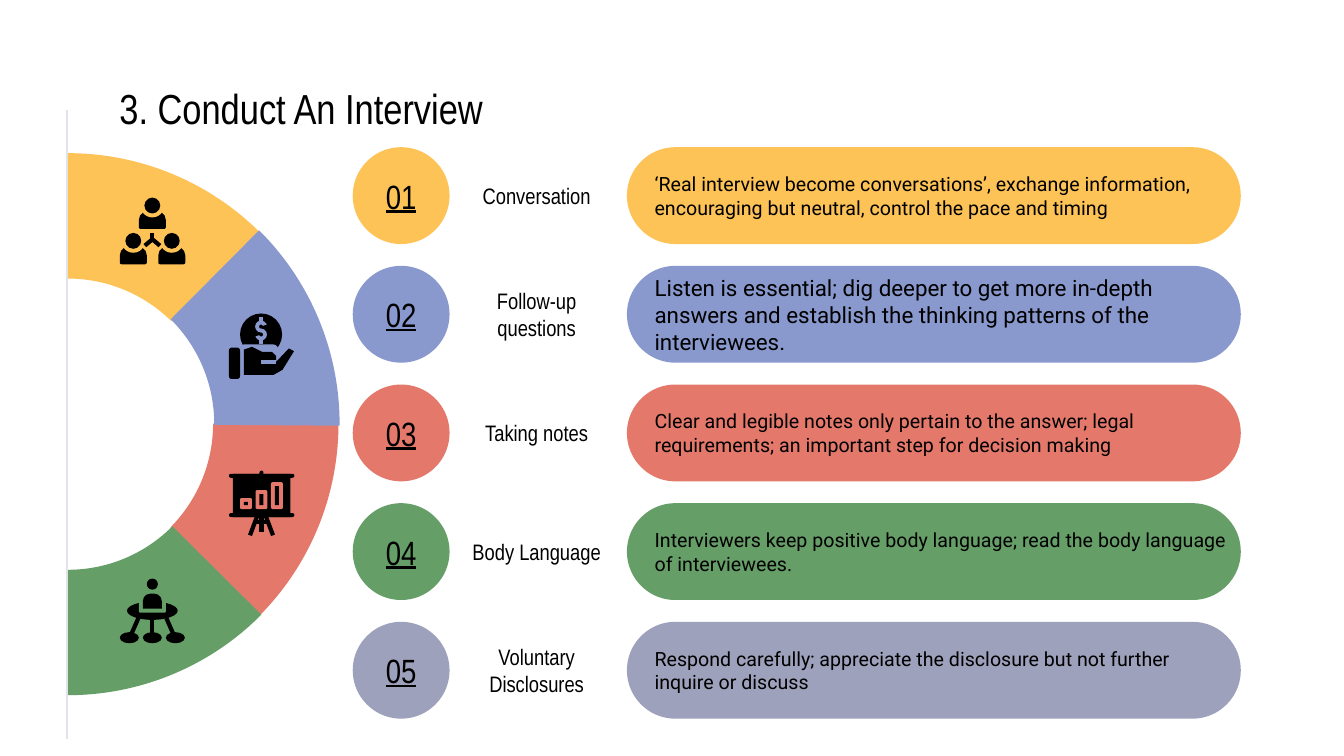
from lxml.etree import SubElement
from pptx import Presentation
from pptx.dml.color import RGBColor
from pptx.enum.shapes import MSO_CONNECTOR, MSO_SHAPE
from pptx.enum.text import MSO_ANCHOR, PP_ALIGN
from pptx.oxml.ns import qn
from pptx.util import Cm, Pt

YELLOW = RGBColor(0xFE, 0xC3, 0x57)
BLUE = RGBColor(0x89, 0x99, 0xCE)
RED = RGBColor(0xE4, 0x79, 0x6B)
GREEN = RGBColor(0x65, 0x9E, 0x67)
LAVENDER = RGBColor(0x9E, 0xA1, 0xBB)
BLACK = RGBColor(0, 0, 0)
PALE_GREY = RGBColor(0xE1, 0xE2, 0xEA)
HEADING_FONT = "Arial Narrow"
BODY_FONT = "Roboto"
OVAL = MSO_SHAPE.OVAL
ROUNDED = MSO_SHAPE.ROUNDED_RECTANGLE
ROUND_TOP = MSO_SHAPE.ROUND_2_SAME_RECTANGLE

presentation = Presentation()
presentation.slide_width = Cm(33.87)
presentation.slide_height = Cm(19.05)
slide = presentation.slides.add_slide(presentation.slide_layouts[5])


def write_text(shape, text, size, font=HEADING_FONT, align=PP_ALIGN.CENTER,
               underline=False, right_inset=0.34):
    frame = shape.text_frame
    frame.word_wrap = True
    frame.vertical_anchor = MSO_ANCHOR.MIDDLE
    frame.margin_left = frame.margin_top = frame.margin_bottom = Cm(0.34)
    frame.margin_right = Cm(right_inset)
    paragraph = frame.paragraphs[0]
    paragraph.alignment = align
    run = paragraph.add_run()
    run.text = text
    run.font.name = font
    run.font.size = Pt(size)
    run.font.color.rgb = BLACK
    if underline:
        run.font.underline = True


def add_filled_shape(kind, left, top, width, height, colour, adjustments=()):
    shape = slide.shapes.add_shape(kind, Cm(left), Cm(top), Cm(width), Cm(height))
    shape.shadow.inherit = False
    shape.fill.solid()
    shape.fill.fore_color.rgb = colour
    shape.line.fill.background()
    for index, value in enumerate(adjustments):
        shape.adjustments[index] = value
    return shape


# Title
title = slide.shapes.title
title.left, title.top, title.width, title.height = Cm(2.67), Cm(1.99), Cm(28.52), Cm(1.45)
write_text(title, "3. Conduct An Interview", 30, align=PP_ALIGN.LEFT)

# Half ring: block arc angles are adjusted in units of 0.6 per degree
DEGREE = 0.6
ring_parts = [
    (RED, -5.21, 3.81, 90, 269.9, 314.7),
    (GREEN, -5.16, 3.78, 90, 314.8, 0.2),
    (YELLOW, -5.16, 3.86, 0, 269.9, 314.7),
    (BLUE, -5.18, 3.81, 0, 314.8, 0.4),
]
for colour, left, top, rotation, start, end in ring_parts:
    arc = add_filled_shape(MSO_SHAPE.BLOCK_ARC, left, top, 13.74, 13.74, colour,
                           [start * DEGREE, end * DEGREE, 0.23])
    arc.rotation = rotation

# Numbered rows
rows = [
    (YELLOW, "Conversation", 14,
     "‘Real interview become conversations’, exchange information, "
     "encouraging but neutral, control the pace and timing"),
    (BLUE, "Follow-up questions", 16,
     "Listen is essential; dig deeper to get more in-depth answers and "
     "establish the thinking patterns of the interviewees."),
    (RED, "Taking notes", 14,
     "Clear and legible notes only pertain to the answer; legal "
     "requirements; an important step for decision making"),
    (GREEN, "Body Language", 14,
     "Interviewers keep positive body language; read the body language "
     "of interviewees."),
    (LAVENDER, "Voluntary Disclosures", 14,
     "Respond carefully; appreciate the disclosure but not further "
     "inquire or discuss"),
]
for index, (colour, label, size, description) in enumerate(rows):
    top = 3.71 + 2.99 * index
    circle = add_filled_shape(OVAL, 8.89, top, 2.44, 2.44, colour)
    write_text(circle, f"{index + 1:02}", 24, underline=True)
    pill = add_filled_shape(ROUNDED, 15.8, top, 15.47, 2.44, colour, [0.5])
    write_text(pill, description, size, font=BODY_FONT, align=PP_ALIGN.LEFT, right_inset=0)
    label_box = slide.shapes.add_textbox(Cm(11.33), Cm(top + 0.34), Cm(4.39), Cm(1.75))
    write_text(label_box, label, 16)

# Straight strokes, drawn last: start x, start y, end x, end y, colour, points
strokes = [(1.69, 2.77, 1.69, 18.62, PALE_GREY, 1.5)]

# Team icon: three people, each head set off from the shoulders by a gap
team_left, team_top = 3.02, 4.98
for across, down in [(0.48, 0), (0, 0.89), (0.97, 0.89)]:
    left, top = team_left + across, team_top + down
    add_filled_shape(ROUND_TOP, left, top + 0.34, 0.68, 0.45, BLACK, [0.5, 0.1])
    add_filled_shape(OVAL, left + 0.04, top - 0.1, 0.6, 0.6, YELLOW)
    add_filled_shape(OVAL, left + 0.14, top, 0.4, 0.4, BLACK)
hub_x, hub_y = team_left + 0.82, team_top + 1.05
for across, down in [(0, -0.16), (-0.19, 0.16), (0.19, 0.16)]:
    strokes.append((hub_x, hub_y, hub_x + across, hub_y + down, BLACK, 3))

# Hand icon: coin with a dollar sign made of two arcs and two short strokes
hand_left, hand_top = 5.77, 7.9
coin_x = hand_left + 0.81
add_filled_shape(OVAL, hand_left + 0.28, hand_top, 1.06, 1.06, BLACK)
for down, start, end in [(0.18, 90, 340), (0.38, 270, 160)]:
    add_filled_shape(MSO_SHAPE.BLOCK_ARC, coin_x - 0.15, hand_top + down, 0.3, 0.3, BLUE,
                     [start * DEGREE, end * DEGREE, 0.33])
for down in (0.1, 0.64):
    strokes.append((coin_x, hand_top + down, coin_x, hand_top + down + 0.12, BLUE, 2.5))

# Hand icon: gap under the coin, sleeve, palm and the slit above the fingers
add_filled_shape(ROUNDED, hand_left + 0.26, hand_top + 0.78, 0.98, 0.4, BLUE, [0.3])
add_filled_shape(ROUNDED, hand_left, hand_top + 0.86, 0.28, 0.79, BLACK, [0.25])
wrist = [(38, 155), (38, 91), (58, 84)]
thumb = [(84, 97), (109, 97), (119, 107), (119, 122)]
fingertips = [(151, 88), (164, 95)]
heel = [(135, 142), (112, 155)]
palm_points = wrist + thumb + fingertips + heel
builder = slide.shapes.build_freeform(*palm_points[0], scale=Cm(0.01))
builder.add_line_segments(palm_points[1:], close=True)
palm = builder.convert_to_shape(Cm(hand_left), Cm(hand_top))
palm.shadow.inherit = False
palm.fill.solid()
palm.fill.fore_color.rgb = BLACK
palm.line.fill.background()
slit_y = hand_top + 1.22
strokes.append((coin_x, slit_y, coin_x + 0.38, slit_y, BLUE, 2.5))

# Board icon: pin, panel, two rails, three rising bars and a tripod
board_left, board_top = 5.77, 11.86
board_x = board_left + 0.82
add_filled_shape(ROUNDED, board_x - 0.05, board_top, 0.1, 0.15, BLACK, [0.5])
add_filled_shape(MSO_SHAPE.RECTANGLE, board_left + 0.1, board_top + 0.08, 1.45, 1.09, BLACK)
for down in (0.08, 1.07):
    add_filled_shape(ROUNDED, board_left, board_top + down, 1.65, 0.1, BLACK, [0.5])
for index in range(3):
    left = board_left + 0.28 + 0.39 * index
    height = 0.28 + 0.2 * index
    top = board_top + 0.97 - height
    add_filled_shape(ROUNDED, left, top, 0.3, height, RED, [0.15])
    add_filled_shape(MSO_SHAPE.RECTANGLE, left + 0.1, top + 0.1, 0.1, height - 0.2, BLACK)
for side, foot in [(-1, 1.63), (0, 1.55), (1, 1.63)]:
    strokes.append((board_x + 0.11 * side, board_top + 1.15,
                    board_x + 0.29 * side, board_top + foot, BLACK, 3))
brace_y = board_top + 1.3
strokes.append((board_x - 0.15, brace_y, board_x + 0.15, brace_y, BLACK, 3))

# Meeting icon: table, person set into it, and a leg to each of three seats
meeting_left, meeting_top = 3.02, 14.58
meeting_x = meeting_left + 0.82
add_filled_shape(OVAL, meeting_x - 0.64, meeting_top + 0.58, 1.28, 0.46, BLACK)
add_filled_shape(ROUNDED, meeting_x - 0.34, meeting_top + 0.5, 0.68, 0.36, GREEN, [0.1])
add_filled_shape(ROUND_TOP, meeting_x - 0.24, meeting_top + 0.38, 0.48, 0.38, BLACK, [0.5])
add_filled_shape(OVAL, meeting_x - 0.14, meeting_top, 0.28, 0.28, BLACK)
for side in (-1, 0, 1):
    add_filled_shape(OVAL, meeting_x + 0.58 * side - 0.24, meeting_top + 1.35,
                     0.48, 0.28, BLACK)
    strokes.append((meeting_x + 0.35 * side, meeting_top + 0.99,
                    meeting_x + 0.53 * side, meeting_top + 1.4, BLACK, 3))

# Draw the strokes
for start_x, start_y, end_x, end_y, colour, points in strokes:
    stroke = slide.shapes.add_connector(MSO_CONNECTOR.STRAIGHT, Cm(start_x), Cm(start_y),
                                        Cm(end_x), Cm(end_y))
    stroke.line.color.rgb = colour
    stroke.line.width = Pt(points)
    SubElement(stroke.element.spPr, qn("a:effectLst"))

presentation.save("out.pptx")
